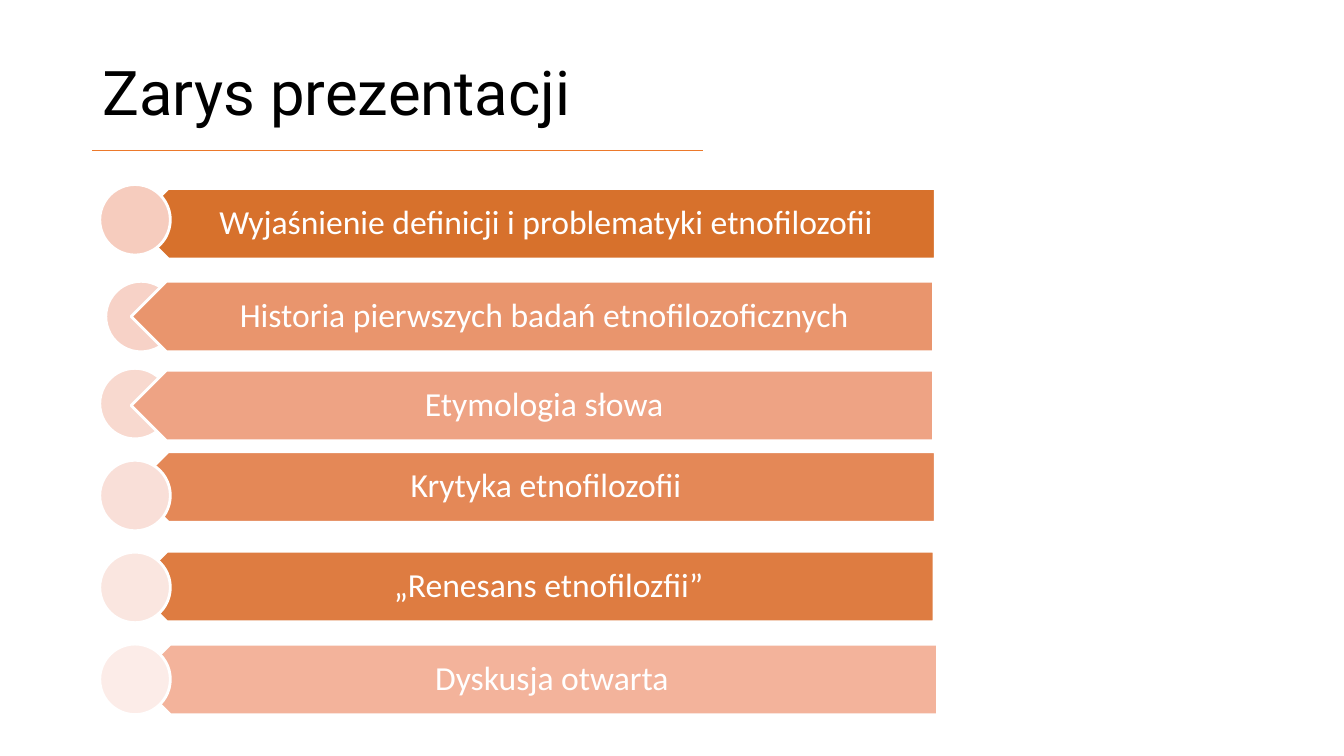
"""Build the outline slide: a title, a rule and six arrow bars with dots."""
import dataclasses

import pptx
import pptx.dml.color
import pptx.enum.shapes
import pptx.enum.text
import pptx.oxml
import pptx.oxml.ns
import pptx.util

Pt = pptx.util.Pt
Shape = pptx.enum.shapes.MSO_SHAPE
Align = pptx.enum.text.PP_ALIGN
Anchor = pptx.enum.text.MSO_ANCHOR


@dataclasses.dataclass(frozen=True)
class Theme:
    """Hold the colours, fonts and type sizes."""
    ink: str = "000000"
    white: str = "FFFFFF"
    rule: str = "EC792B"
    bars: tuple = ("D7712C", "DE7C41", "E48857", "E9956D", "EEA384", "F3B39B")
    dots: tuple = ("F6CCBE", "F7D2C7", "F8D9CF", "F9DFD8", "FAE6E0", "FCECE8")
    head: str = "Roboto"
    body: str = "Calibri"
    big: int = 44
    mid: int = 24


THEME = Theme()
SIZE = 50.4
BAR = 573.1
SHIFT = 12.9
LABEL = 561
DOT_LEFT = 71.3
DOT_TOP = 131.8
STEP = 65.65
NUDGE = {1: (4.3, 3.5)}

BARS = (
    ("Wyjaśnienie definicji i problematyki etnofilozofii ", 95, 134.6),
    ("„Renesans etnofilozfii”", 94.1, 393.8),
    ("Krytyka etnofilozofii ", 95, 322.6),
    ("Historia pierwszych badań etnofilozoficznych ", 93.7, 200.9),
    ("Etymologia słowa ", 93.7, 264.4),
    ("Dyskusja otwarta", 96.5, 460.1),
)


def tint(code):
    """Turn a hex code into a colour."""
    return pptx.dml.color.RGBColor.from_string(code)


def apply(item, form):
    """Set each attribute named in a dict."""
    for name, value in form.items():
        setattr(item, name, value)


def write(frame, text, font, size, color, align, pads):
    """Write one styled line in a text frame."""
    sides = ("margin_left", "margin_top", "margin_right", "margin_bottom")
    form = {side: Pt(pad) for side, pad in zip(sides, pads)}
    apply(frame, {"word_wrap": True, "vertical_anchor": Anchor.MIDDLE, **form})
    para = frame.paragraphs[0]
    apply(para, {"alignment": align, "line_spacing": 0.9})
    run = para.add_run()
    run.text = text
    apply(run.font, {"name": font, "size": Pt(size)})
    run.font.color.rgb = tint(color)


def add_title(slide, text):
    """Place and fill the title."""
    title = slide.shapes.title
    apply(title, {"left": Pt(66), "top": Pt(28.8),
                  "width": Pt(828), "height": Pt(78.5)})
    write(title.text_frame, text, THEME.head, THEME.big, THEME.ink,
          Align.LEFT, (7.2, 3.6, 7.2, 3.6))


def add_rule(slide, left, right, top):
    """Draw a thin level line."""
    line = slide.shapes.add_connector(
        pptx.enum.shapes.MSO_CONNECTOR.STRAIGHT,
        Pt(left), Pt(top), Pt(right), Pt(top))
    line.line.color.rgb = tint(THEME.rule)
    line.line.width = Pt(0.75)
    props = line._element.spPr
    props.append(pptx.oxml.parse_xml(
        "<a:effectLst %s/>" % pptx.oxml.ns.nsdecls("a")))


def add_form(slide, kind, left, top, width, fill):
    """Draw a filled shape with a white edge."""
    shape = slide.shapes.add_shape(kind, Pt(left), Pt(top), Pt(width), Pt(SIZE))
    shape.shadow.inherit = False
    shape.fill.solid()
    shape.fill.fore_color.rgb = tint(fill)
    shape.line.color.rgb = tint(THEME.white)
    shape.line.width = Pt(2)
    return shape


def add_bar(slide, text, left, top, fill):
    """Draw an arrow bar that points left, with its label."""
    bar = add_form(slide, Shape.PENTAGON, left, top, BAR, fill)
    bar.rotation = 180
    box = slide.shapes.add_textbox(
        Pt(left + SHIFT), Pt(top), Pt(LABEL), Pt(SIZE))
    write(box.text_frame, text, THEME.body, THEME.mid, THEME.white,
          Align.CENTER, (22.3, 7.2, 13.7, 7.2))


def add_dot(slide, row, fill):
    """Draw the dot of a row."""
    right, down = NUDGE.get(row, (0, 0))
    add_form(slide, Shape.OVAL, DOT_LEFT + right,
             DOT_TOP + row * STEP + down, SIZE, fill)


def main():
    """Build and save the slide."""
    deck = pptx.Presentation()
    apply(deck, {"slide_width": Pt(960), "slide_height": Pt(540)})
    slide = deck.slides.add_slide(deck.slide_layouts[5])
    add_title(slide, "Zarys prezentacji")
    add_rule(slide, 66, 502.5, 107.3)
    for row, (text, left, top) in enumerate(BARS):
        add_bar(slide, text, left, top, THEME.bars[row])
        add_dot(slide, row, THEME.dots[row])
    deck.save("out.pptx")


if __name__ == "__main__":
    main()
